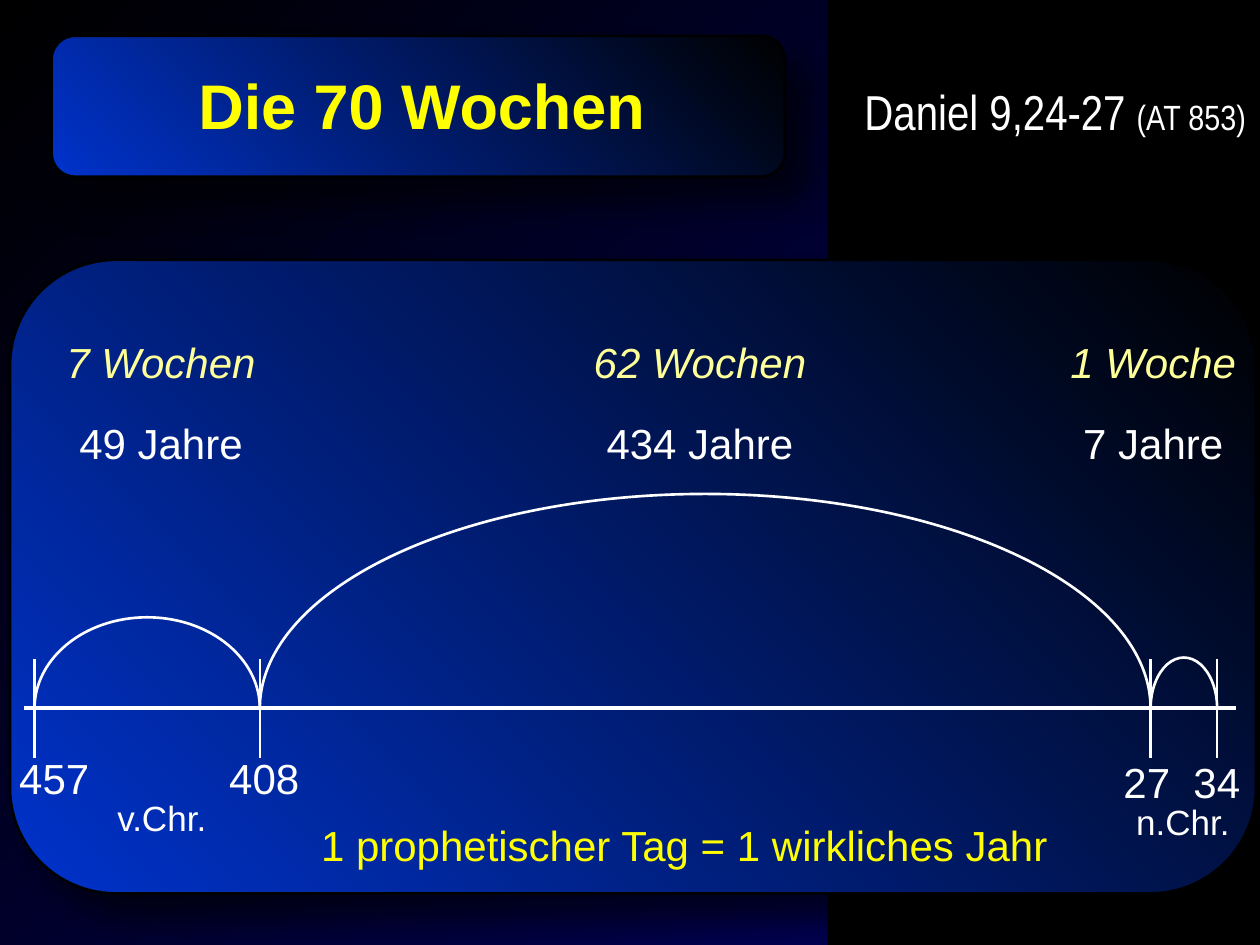
"""Build the slide about the seventy weeks timeline."""
import dataclasses

import lxml.etree
import pptx
import pptx.dml.color
import pptx.enum.shapes
import pptx.enum.text
import pptx.oxml.ns
import pptx.util

Pt = pptx.util.Pt
SHAPE = pptx.enum.shapes.MSO_SHAPE
ALIGN = pptx.enum.text.PP_ALIGN


@dataclasses.dataclass(frozen=True)
class Theme:
    font: str = "Arial"
    narrow: str = "Arial Narrow"
    black: str = "000000"
    navy: str = "000066"
    blue: str = "0033CC"
    white: str = "FFFFFF"
    yellow: str = "FFFF00"
    pale: str = "FFFF99"
    title: float = 36
    verse: float = 28
    body: float = 24
    small: float = 20
    thin: float = 1.5
    thick: float = 2.25


@dataclasses.dataclass(frozen=True)
class Period:
    start: float
    end: float
    rise: float
    center: float
    width: float
    weeks: str
    years: str


@dataclasses.dataclass(frozen=True)
class Era:
    left: float
    top: float
    width: float
    tab: float
    dates: str
    name: str


T = Theme()
AXIS_Y = 404.75
TICK = 28.25
PERIODS = [
    Period(19.75, 148.5, 52, 92, 148, "7 Wochen", "49 Jahre"),
    Period(148.5, 657.5, 122.5, 400, 174, "62 Wochen", "434 Jahre"),
    Period(657.5, 695.5, 29, 659, 122, "1 Woche", "7 Jahre"),
]
ERAS = [
    Era(11, 431, 163, 120, "457\t408", "v.Chr."),
    Era(642, 433, 68, 40, "27\t34", "n.Chr."),
]


def rgb(color: str) -> pptx.dml.color.RGBColor:
    """Turn a hex string into a colour."""
    return pptx.dml.color.RGBColor.from_string(color)


def add_xml(parent, tag: str, **attrs: str):
    """Append a DrawingML child element and return it."""
    return lxml.etree.SubElement(parent, pptx.oxml.ns.qn(tag), attrs)


def set_gradient(fill, first: str, last: str, angle: float) -> None:
    """Fill with a linear gradient between two colours."""
    fill.gradient()
    fill.gradient_angle = angle
    for stop, color in zip(fill.gradient_stops, (first, last)):
        stop.color.rgb = rgb(color)


def add_shape(s, kind, left: float, top: float, width: float, height: float):
    """Add a preset shape without a shadow."""
    sp = s.shapes.add_shape(kind, Pt(left), Pt(top), Pt(width), Pt(height))
    sp.shadow.inherit = False
    return sp


def add_panel(s, left: float, top: float, width: float, height: float) -> None:
    """Add a rounded gradient panel with a soft shadow."""
    sp = add_shape(s, SHAPE.ROUNDED_RECTANGLE, left, top, width, height)
    sp.adjustments[0] = 0.167
    set_gradient(sp.fill, T.blue, T.black, 45)
    sp.line.color.rgb = rgb(T.black)
    sp.line.width = Pt(T.thin)
    effects = sp._element.spPr.find(pptx.oxml.ns.qn("a:effectLst"))
    shadow = add_xml(effects, "a:outerShdw", blurRad=str(Pt(20)),
                     dist=str(Pt(20)), dir="2700000", algn="tl", rotWithShape="0")
    add_xml(add_xml(shadow, "a:srgbClr", val=T.black), "a:alpha", val="60000")


def add_line(s, x1: float, y1: float, x2: float, y2: float, width: float) -> None:
    """Add a straight white line."""
    kind = pptx.enum.shapes.MSO_CONNECTOR.STRAIGHT
    line = s.shapes.add_connector(kind, Pt(x1), Pt(y1), Pt(x2), Pt(y2))
    line.line.color.rgb = rgb(T.white)
    line.line.width = Pt(width)
    add_xml(line._element.spPr, "a:effectLst")


def add_arc(s, period: Period) -> None:
    """Span a period with a half ellipse standing on the axis."""
    arc = add_shape(s, SHAPE.ARC, period.start, AXIS_Y - period.rise,
                    period.end - period.start, 2 * period.rise)
    arc.adjustments[0] = 108
    arc.adjustments[1] = 0
    arc.fill.background()
    arc.line.color.rgb = rgb(T.white)
    arc.line.width = Pt(T.thin)


def add_run(p, text: str, *, size: float = T.body, color: str = T.white,
            font: str = T.font, bold: bool = False, italic: bool = False) -> None:
    """Add a formatted run to a paragraph."""
    r = p.add_run()
    r.text = text
    r.font.size = Pt(size)
    r.font.name = font
    r.font.bold = bold
    r.font.italic = italic
    r.font.color.rgb = rgb(color)


def add_text(s, text: str, left: float, top: float, width: float,
             height: float = 36, align=ALIGN.CENTER, **style):
    """Add a text box with one formatted paragraph and return its frame."""
    tb = s.shapes.add_textbox(Pt(left), Pt(top), Pt(width), Pt(height))
    tf = tb.text_frame
    tf.word_wrap = True
    tf.margin_left = tf.margin_right = 0
    tf.paragraphs[0].alignment = align
    add_run(tf.paragraphs[0], text, **style)
    return tf


def add_era(s, era: Era) -> None:
    """Label two dates and the era below them."""
    tf = add_text(s, era.dates, era.left, era.top, era.width, 52, ALIGN.LEFT)
    tabs = add_xml(tf.paragraphs[0]._p.get_or_add_pPr(), "a:tabLst")
    add_xml(tabs, "a:tab", pos=str(Pt(era.tab)), algn="l")
    p = tf.add_paragraph()
    p.alignment = ALIGN.CENTER
    add_run(p, era.name, size=T.small)
    for p in tf.paragraphs:
        p.line_spacing = 0.85


def main() -> None:
    """Compose and save the slide."""
    prs = pptx.Presentation()
    prs.slide_width, prs.slide_height = Pt(720), Pt(540)
    s = prs.slides.add_slide(prs.slide_layouts[6])
    set_gradient(s.background.fill, T.black, T.navy, 315)
    band = add_shape(s, SHAPE.RECTANGLE, 473, 0, 247, 540)
    band.fill.solid()
    band.fill.fore_color.rgb = rgb(T.black)
    band.line.fill.background()
    add_panel(s, 5.75, 148.5, 712, 362)

    for period in PERIODS:
        add_arc(s, period)
    add_line(s, 13.5, AXIS_Y, 706.5, AXIS_Y, T.thick)
    for x in [PERIODS[0].start] + [period.end for period in PERIODS]:
        add_line(s, x, AXIS_Y - TICK, x, AXIS_Y + TICK, T.thin)
    for period in PERIODS:
        left = period.center - period.width / 2
        add_text(s, period.weeks, left, 189, period.width,
                 color=T.pale, italic=True)
        add_text(s, period.years, left, 235, period.width)
    for era in ERAS:
        add_era(s, era)

    add_panel(s, 29.5, 20.5, 419, 80.5)
    add_text(s, "Die 70 Wochen", 37, 34.5, 408, 51,
             size=T.title, color=T.yellow, bold=True)
    tf = add_text(s, "Daniel 9,24-27 ", 494, 43, 226, 41, ALIGN.LEFT,
                  size=T.verse, font=T.narrow)
    add_run(tf.paragraphs[0], "(AT 853)", size=T.small, font=T.narrow)
    add_text(s, "1 prophetischer Tag = 1 wirkliches Jahr", 154, 464.5, 474,
             color=T.yellow)
    prs.save("out.pptx")


if __name__ == "__main__":
    main()
